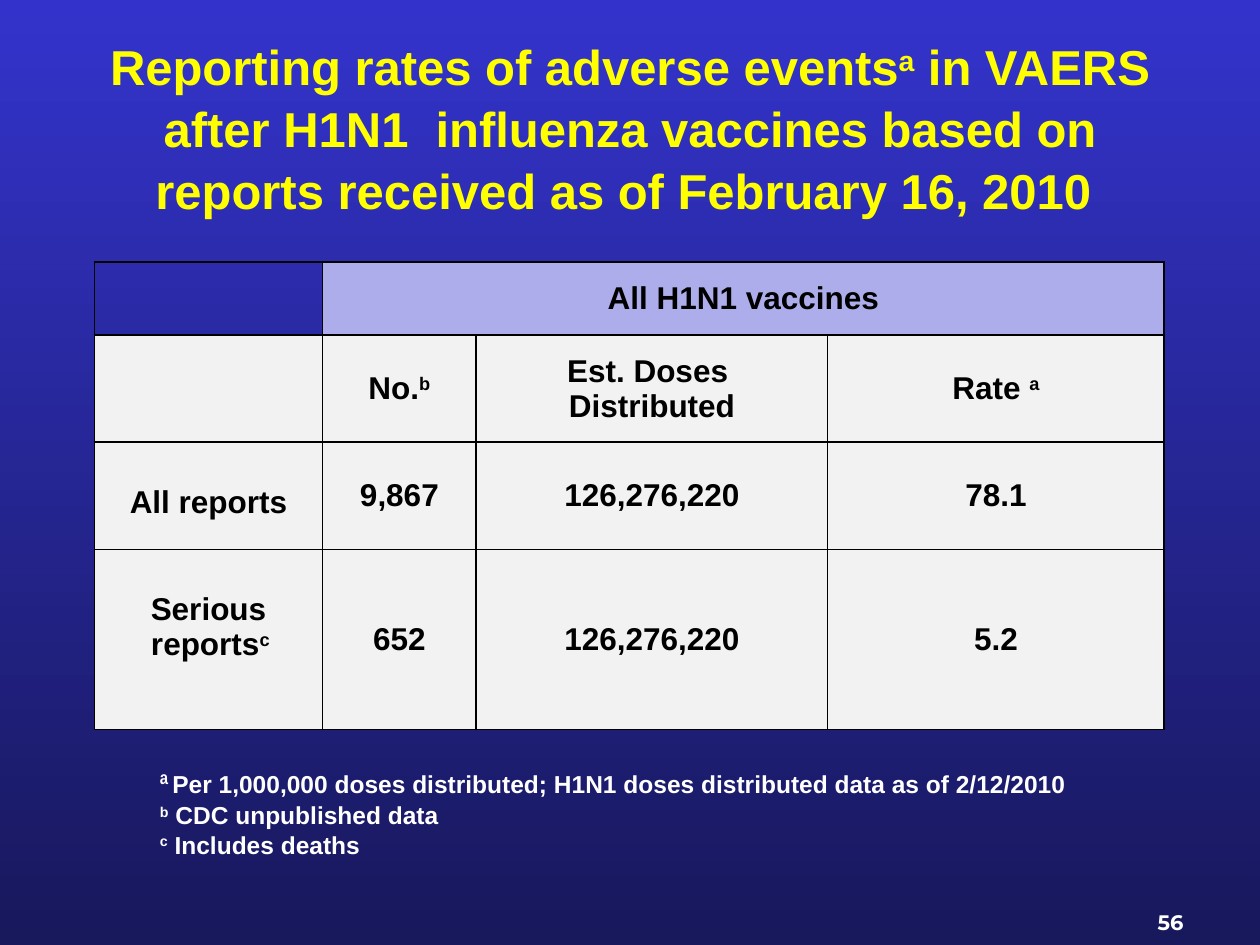
from lxml import etree
from pptx import Presentation
from pptx.dml.color import RGBColor
from pptx.enum.text import MSO_ANCHOR as Anchor, MSO_AUTO_SIZE as Fit, PP_ALIGN as Align
from pptx.oxml.ns import qn
from pptx.util import Inches, Pt


def write(frame, text, size, color, align=Align.CENTER, face="Arial"):
    """Fill a frame line by line; text between carets is superscript."""
    frame.word_wrap = True
    for i, line in enumerate(text.split("\n")):
        para = frame.paragraphs[0] if i == 0 else frame.add_paragraph()
        para.alignment = align
        for j, part in enumerate(line.split("^")):
            if not part:
                continue
            run = para.add_run()
            run.text = part
            font = run.font
            font.name, font.size, font.bold = face, Pt(size), True
            font.color.rgb = RGBColor.from_string(color)
            if j % 2:
                font._element.set("baseline", "30000")


def border(cell, color="000000", width=1):
    props = cell._tc.get_or_add_tcPr()
    for i, side in enumerate(("lnL", "lnR", "lnT", "lnB")):
        line = etree.Element(qn("a:" + side), w=str(Pt(width)))
        fill = etree.SubElement(line, qn("a:solidFill"))
        etree.SubElement(fill, qn("a:srgbClr"), val=color)
        props.insert(i, line)


deck = Presentation()
deck.slide_width, deck.slide_height = Inches(10), Inches(7.5)
slide = deck.slides.add_slide(deck.slide_layouts[5])

back = slide.background.fill
back.gradient()
back.gradient_angle = 270
for stop, color in zip(back.gradient_stops, ("3333CC", "18185C")):
    stop.color.rgb = RGBColor.from_string(color)

# Title
title = slide.shapes.title
title.left, title.top = Inches(0.75), Inches(0.17)
title.width, title.height = Inches(8.5), Inches(1.67)
frame = title.text_frame
frame.auto_size = Fit.NONE
frame.vertical_anchor = Anchor.MIDDLE
write(frame, "Reporting rates of adverse events^a^ in VAERS after H1N1  influenza "
      "vaccines based on reports received as of February 16, 2010 ", 28, "FFFF00")
frame.paragraphs[0].line_spacing = 1.05

# Table
rows = [
    ["", "All H1N1 vaccines", "", ""],
    ["", "No.^b^", "Est. Doses \nDistributed", "Rate ^a^"],
    ["All reports", "9,867", "126,276,220", "78.1"],
    ["Serious\n reports^c ^", "652", "126,276,220", "5.2"],
]
widths = [1.81, 1.22, 2.79, 2.67]
heights = [0.58, 0.85, 0.85, 1.43]
table = slide.shapes.add_table(4, 4, Inches(0.75), Inches(2.08),
                               Inches(8.5), Inches(3.72)).table
table.first_row = table.horz_banding = False
for col, width in zip(table.columns, widths):
    col.width = Inches(width)
for row, height in zip(table.rows, heights):
    row.height = Inches(height)
table.cell(0, 1).merge(table.cell(0, 3))

for r, row in enumerate(rows):
    for c, text in enumerate(row):
        cell = table.cell(r, c)
        label = c == 0 and r > 1
        cell.vertical_anchor = Anchor.TOP if label else Anchor.MIDDLE
        cell.margin_left = cell.margin_right = cell.margin_bottom = Inches(0.05)
        cell.margin_top = Inches(0.34 if label else 0.05)
        if r == 0 and c == 0:
            cell.fill.background()
        else:
            cell.fill.solid()
            cell.fill.fore_color.rgb = RGBColor.from_string("F2F2F2" if r else "ADADEB")
        border(cell)
        if text:
            write(cell.text_frame, text, 18, "000000")

# Footnotes
notes = slide.shapes.add_textbox(Inches(1.17), Inches(5.83), Inches(7.75), Inches(1.28))
frame = notes.text_frame
frame.margin_top, frame.margin_bottom = Inches(0.22), 0
write(frame, "^a ^Per 1,000,000 doses distributed; H1N1 doses distributed data as of 2/12/2010\n"
      "^b^ CDC unpublished data\n^c^ Includes deaths", 14, "FFFFFF", Align.LEFT)
mark = frame.paragraphs[0].runs[0].font
mark.name, mark.size = "Arial Narrow", Pt(18)

# Page number
page = slide.shapes.add_textbox(Inches(8.58), Inches(7.17), Inches(1.42), Inches(0.3))
write(page.text_frame, "56", 12, "FFFFFF", face="Montserrat")

deck.save("out.pptx")
